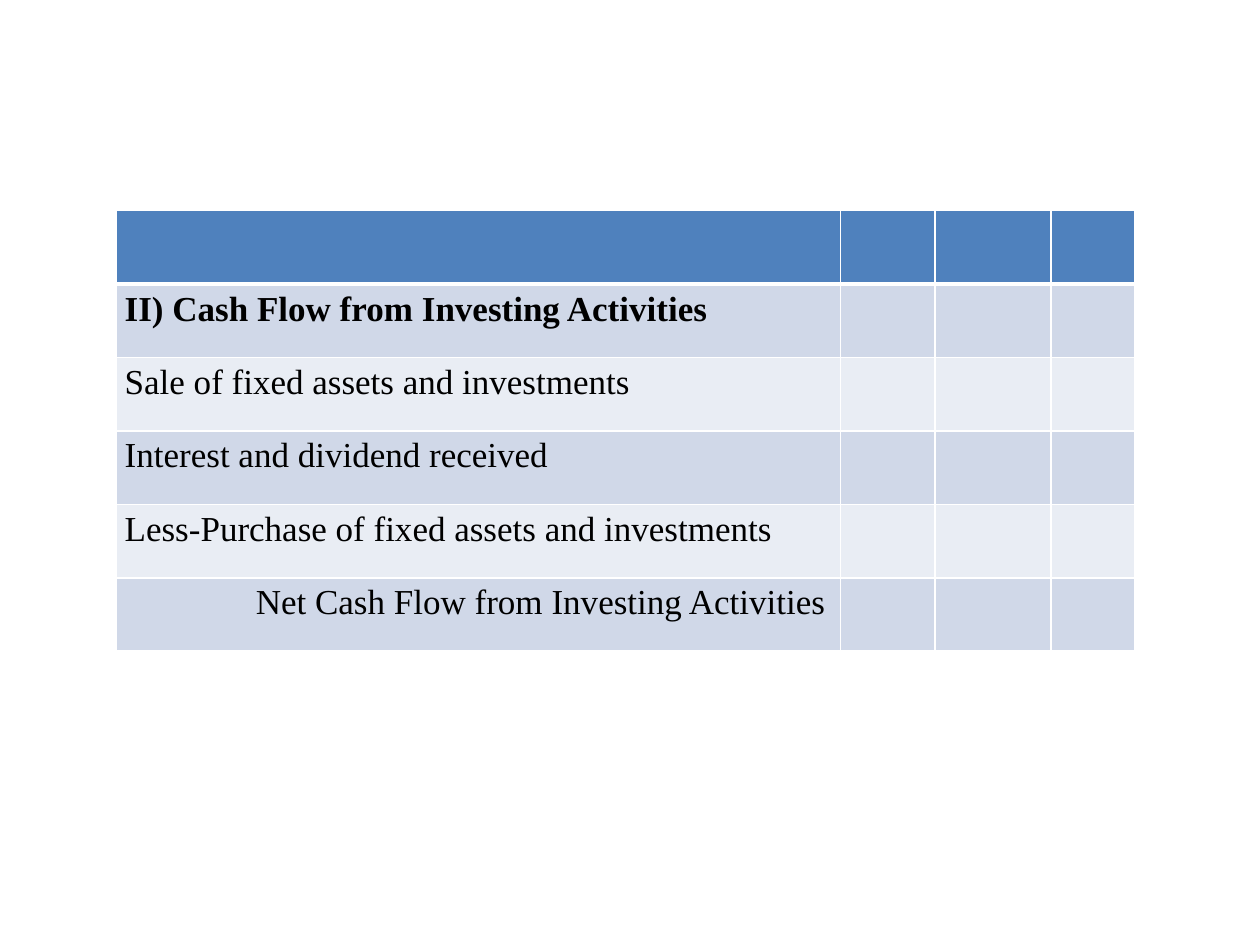
"""Build a slide with the investing section of a cash flow statement."""
from dataclasses import dataclass

import pptx
import pptx.dml.color
import pptx.oxml
import pptx.oxml.ns
import pptx.util

Inches = pptx.util.Inches
Pt = pptx.util.Pt


@dataclass(frozen=True)
class Theme:
    """Colours, type and line sizes of the slide."""
    header: str = "4F81BD"
    bands: tuple = ("D0D8E8", "E9EDF4")
    border: str = "FFFFFF"
    text: str = "000000"
    font: str = "Times New Roman"
    size: int = 20
    thin: int = 1
    thick: int = 3


THEME = Theme()
COLUMN_WIDTHS = (5.75, 0.75, 0.92, 0.67)
ENTRIES = (
    ("II) Cash Flow from Investing Activities", True, 0),
    ("Sale of fixed assets and investments", False, 0),
    ("Interest and dividend received", False, 0),
    ("Less-Purchase of fixed assets and investments", False, 0),
    ("Net Cash Flow from Investing Activities", False, 1.04),
)


def set_attributes(target, values):
    """Set each named attribute of the target."""
    for name, value in values.items():
        setattr(target, name, value)


def set_borders(cell, top, bottom):
    """Draw the four cell borders with the given top and bottom widths."""
    properties = cell._tc.get_or_add_tcPr()
    widths = {"lnL": THEME.thin, "lnR": THEME.thin, "lnT": top, "lnB": bottom}
    for position, (side, width) in enumerate(widths.items()):
        line = pptx.oxml.parse_xml(
            f'<a:{side} {pptx.oxml.ns.nsdecls("a")} w="{Pt(width)}">'
            f'<a:solidFill><a:srgbClr val="{THEME.border}"/></a:solidFill></a:{side}>'
        )
        properties.insert(position, line)


def write_entry(cell, text, bold, indent):
    """Write one statement line into a cell."""
    set_attributes(cell, {
        "margin_left": Inches(0.07), "margin_right": Inches(0.07),
        "margin_top": 0, "margin_bottom": 0,
    })
    paragraph = cell.text_frame.paragraphs[0]
    paragraph.line_spacing = 1.15
    if indent:
        paragraph._p.get_or_add_pPr().set("marL", str(Inches(indent)))
    run = paragraph.add_run()
    run.text = text
    set_attributes(run.font, {"name": THEME.font, "size": Pt(THEME.size), "bold": bold})
    run.font.color.rgb = pptx.dml.color.RGBColor.from_string(THEME.text)


def add_statement_table(slide, left, top, width, height):
    """Place the cash flow table in the given box."""
    row_count = len(ENTRIES) + 1
    table = slide.shapes.add_table(
        row_count, len(COLUMN_WIDTHS), left, top, width, height
    ).table
    for column, column_width in zip(table.columns, COLUMN_WIDTHS):
        column.width = Inches(column_width)
    for index, row in enumerate(table.rows):
        row.height = int(height / row_count)
        colour = THEME.bands[(index - 1) % 2] if index else THEME.header
        for cell in row.cells:
            cell.fill.solid()
            cell.fill.fore_color.rgb = pptx.dml.color.RGBColor.from_string(colour)
            set_borders(
                cell,
                top=THEME.thick if index == 1 else THEME.thin,
                bottom=THEME.thick if index == 0 else THEME.thin,
            )
    for index, entry in enumerate(ENTRIES, start=1):
        write_entry(table.cell(index, 0), *entry)


def main():
    """Create and save the presentation."""
    presentation = pptx.Presentation()
    set_attributes(presentation, {"slide_width": Inches(10), "slide_height": Inches(7.5)})
    slide = presentation.slides.add_slide(presentation.slide_layouts[6])
    add_statement_table(
        slide, Inches(0.92), Inches(1.67), Inches(sum(COLUMN_WIDTHS)), Inches(3.5)
    )
    presentation.save("out.pptx")


if __name__ == "__main__":
    main()
